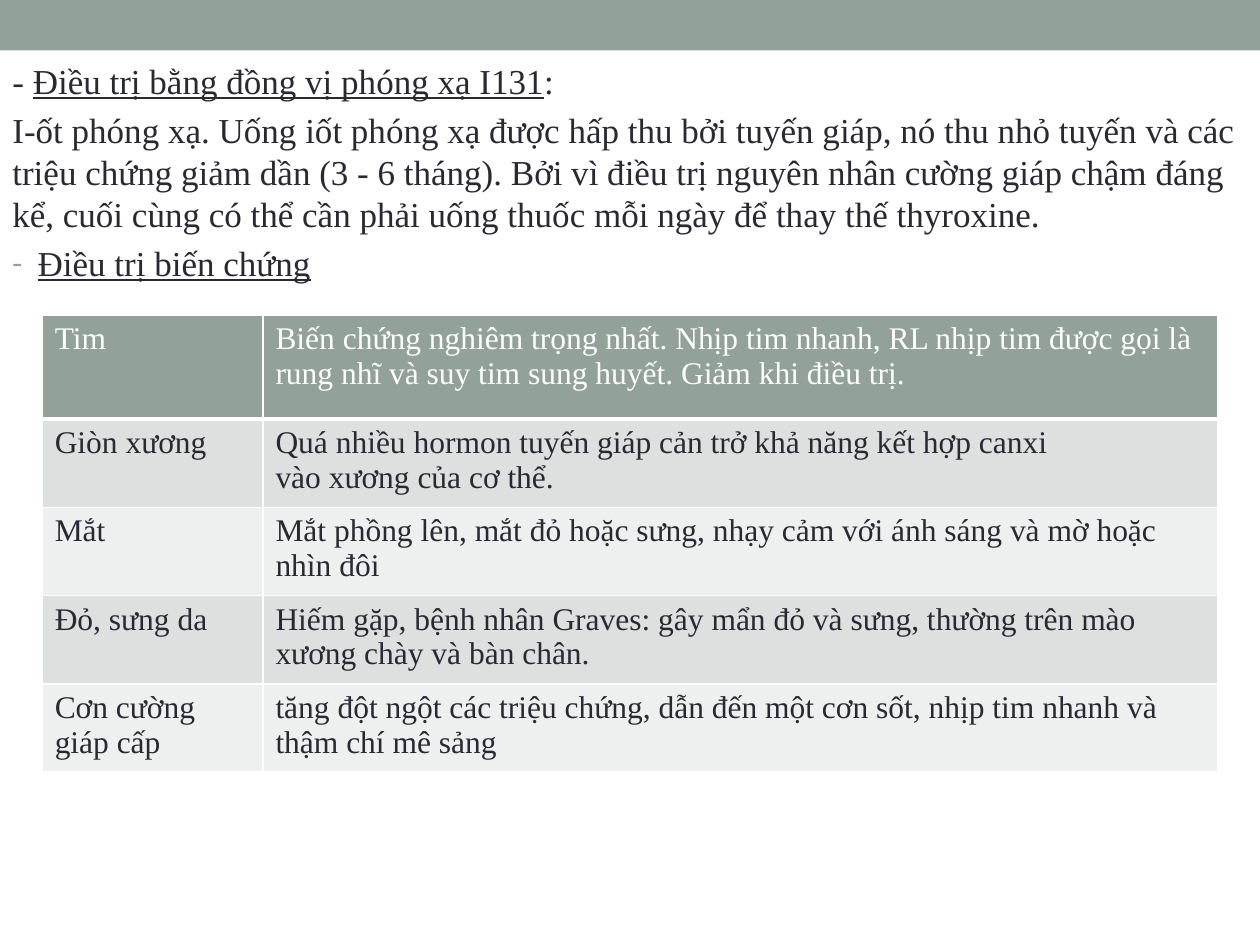
from dataclasses import dataclass

import pptx
import pptx.dml.color
import pptx.oxml
import pptx.oxml.ns
import pptx.util
from pptx.enum.shapes import MSO_SHAPE
from pptx.util import Cm


@dataclass(frozen=True)
class Theme:
    font: str = "Times New Roman"
    sage: str = "93A299"
    ink: str = "292934"
    white: str = "FFFFFF"
    bands: tuple = ("DCE0DE", "EEF0EF")
    body_size: int = 20
    table_size: int = 18


theme = Theme()
rgb = pptx.dml.color.RGBColor.from_string


def add_text(paragraph, text, *, size, color=theme.ink, underline=None):
    run = paragraph.add_run()
    run.text = text
    run.font.name = theme.font
    run.font.size = pptx.util.Pt(size)
    run.font.color.rgb = rgb(color)
    run.font.underline = underline


def xml_element(tag, content, attributes=""):
    return pptx.oxml.parse_xml(
        f'<a:{tag} {pptx.oxml.ns.nsdecls("a")} {attributes}>{content}</a:{tag}>')


deck = pptx.Presentation()
deck.slide_width, deck.slide_height = Cm(25.4), Cm(19.05)
slide = deck.slides.add_slide(deck.slide_layouts[6])

# Top band
band = slide.shapes.add_shape(MSO_SHAPE.RECTANGLE, 0, 0, deck.slide_width, Cm(1.02))
band.shadow.inherit = False
band.fill.solid()
band.fill.fore_color.rgb = rgb(theme.sage)
band.line.fill.background()

# Treatment text: each paragraph is a list of (text, underlined)
treatment = [
    [("- ", False), ("Điều trị bằng đồng vị phóng xạ I131", True), (":", False)],
    [("I-ốt phóng xạ. Uống iốt phóng xạ được hấp thu bởi tuyến giáp, nó thu nhỏ tuyến "
      "và các triệu chứng giảm dần (3 - 6 tháng). Bởi vì điều trị nguyên nhân cường giáp "
      "chậm đáng kể, cuối cùng có thể cần phải uống thuốc mỗi ngày để thay thế thyroxine.",
      False)],
    [("Điều trị biến chứng", True)],
]
body = slide.shapes.add_textbox(0, Cm(1.07), deck.slide_width, Cm(17.98)).text_frame
body.word_wrap = True
for index, pieces in enumerate(treatment):
    paragraph = body.add_paragraph() if index else body.paragraphs[0]
    paragraph.space_before = pptx.util.Pt(4)
    for text, underlined in pieces:
        add_text(paragraph, text, size=theme.body_size, underline=underlined)

# The last paragraph carries a dash bullet with a hanging indent
bullet = paragraph._p.get_or_add_pPr()
bullet.set("marL", str(Cm(0.51)))
bullet.set("indent", str(-Cm(0.51)))
bullet.append(xml_element("buClr", f'<a:srgbClr val="{theme.sage}"/>'))
bullet.append(xml_element("buSzPct", "", 'val="85000"'))
bullet.append(xml_element("buFont", "", f'typeface="{theme.font}"'))
bullet.append(xml_element("buChar", "", 'char="-"'))

# Complications table
complications = [
    ("Tim", "Biến chứng nghiêm trọng nhất. Nhịp tim nhanh, RL nhịp tim được gọi là "
            "rung nhĩ và suy tim sung huyết. Giảm khi điều trị."),
    ("Giòn xương", "Quá nhiều hormon tuyến giáp cản trở khả năng kết hợp canxi\n"
                   "vào xương của cơ thể."),
    ("Mắt", "Mắt phồng lên, mắt đỏ hoặc sưng, nhạy cảm với ánh sáng và mờ hoặc nhìn đôi"),
    ("Đỏ, sưng da", "Hiếm gặp, bệnh nhân Graves: gây mẩn đỏ và sưng, thường trên mào "
                    "xương chày và bàn chân."),
    ("Cơn cường giáp cấp", "tăng đột ngột các triệu chứng, dẫn đến một cơn sốt, "
                           "nhịp tim nhanh và thậm chí mê sảng"),
]
column_widths = [Cm(4.45), Cm(19.25)]
row_heights = [Cm(2.1)] + [Cm(1.53)] * 4
table = slide.shapes.add_table(
    len(complications), len(column_widths), Cm(0.85), Cm(6.35),
    sum(column_widths), sum(row_heights)).table
for column, width in zip(table.columns, column_widths):
    column.width = width

for row_index, (row, height) in enumerate(zip(table.rows, row_heights)):
    row.height = height
    is_header = row_index == 0
    fill = theme.sage if is_header else theme.bands[(row_index - 1) % 2]
    color = theme.white if is_header else theme.ink
    edges = {"lnL": 1, "lnR": 1, "lnT": 3 if row_index == 1 else 1,
             "lnB": 3 if is_header else 1}
    for cell, content in zip(row.cells, complications[row_index]):
        cell.fill.solid()
        cell.fill.fore_color.rgb = rgb(fill)
        for position, (edge, points) in enumerate(edges.items()):
            line = xml_element(
                edge, f'<a:solidFill><a:srgbClr val="{theme.white}"/></a:solidFill>',
                f'w="{pptx.util.Pt(points)}"')
            cell._tc.get_or_add_tcPr().insert(position, line)
        for index, text in enumerate(content.split("\n")):
            frame = cell.text_frame
            paragraph = frame.add_paragraph() if index else frame.paragraphs[0]
            add_text(paragraph, text, size=theme.table_size, color=color)

deck.save("out.pptx")
